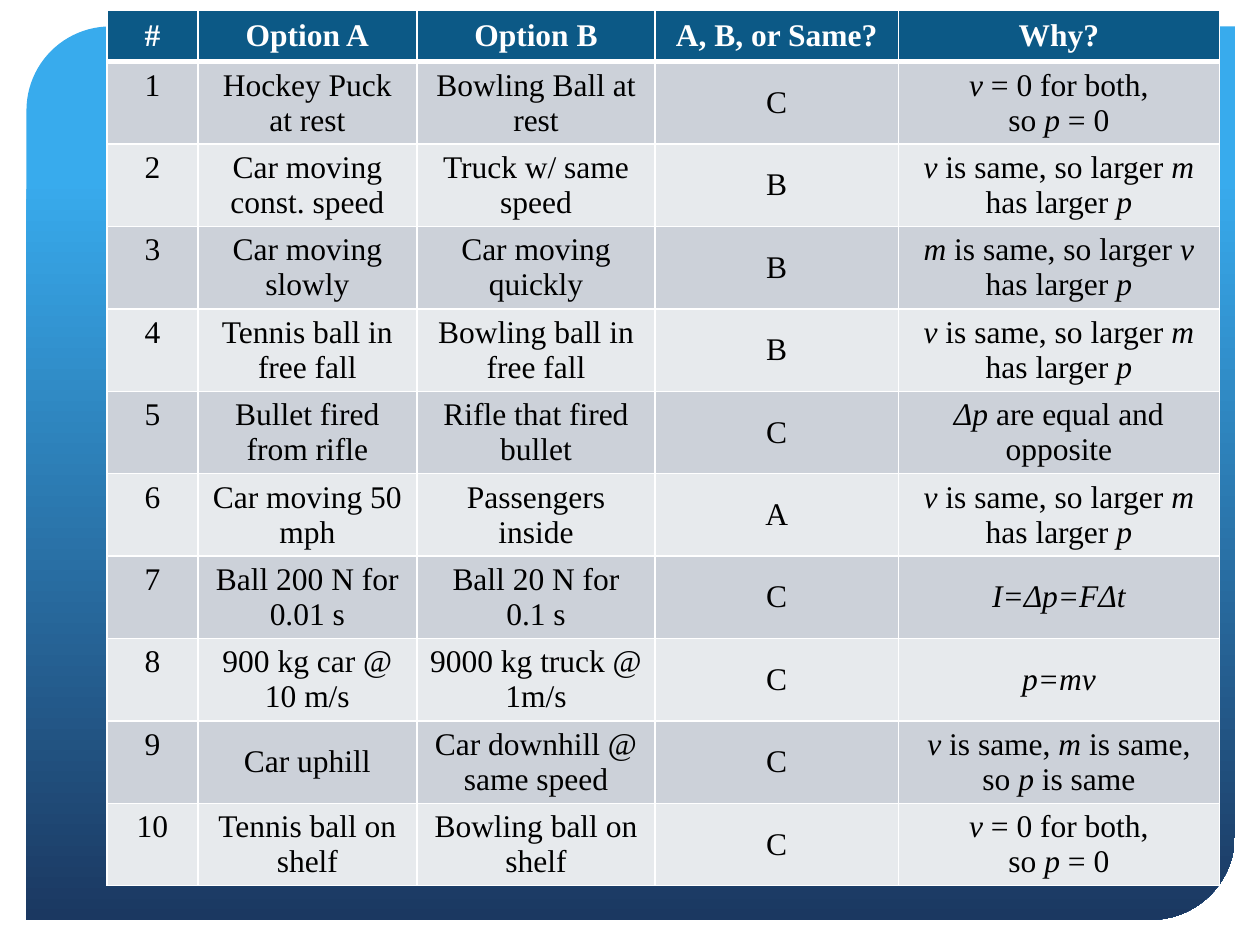
from lxml.etree import SubElement
from pptx import Presentation
from pptx.dml.color import RGBColor
from pptx.enum.shapes import MSO_SHAPE as Shape
from pptx.enum.text import MSO_ANCHOR as Anchor, PP_ALIGN as Align
from pptx.oxml.ns import qn
from pptx.util import Inches, Pt

COLORS = {
    "sky": "38ABED", "navy": "1B3861", "header": "0C5986",
    "odd": "CCD1D9", "even": "E7EAED", "white": "FFFFFF", "black": "000000",
}
FONT = "Times New Roman"

# Asterisks enclose italic text; a new line starts a new paragraph.
AT_REST = "*v *= 0 for both,\nso *p *= 0"
SAME_SPEED = "*v* is same, so larger *m* has larger *p*"
SAME_MASS = "*m* is same, so larger *v* has larger *p*"
HEADINGS = ("#", "Option A", "Option B", "A, B, or Same?", "Why?")
QUESTIONS = [
    ("Hockey Puck at rest", "Bowling Ball at rest", "C", AT_REST),
    ("Car moving const. speed", "Truck w/ same speed", "B", SAME_SPEED),
    ("Car moving slowly", "Car moving quickly", "B", SAME_MASS),
    ("Tennis ball in free fall", "Bowling ball in free fall", "B", SAME_SPEED),
    ("Bullet fired from rifle", "Rifle that fired bullet", "C",
     "*Δp *are equal and opposite"),
    ("Car moving 50 mph", "Passengers inside", "A", SAME_SPEED),
    ("Ball 200 N for 0.01 s", "Ball 20 N for\n0.1 s", "C", "*I=Δp=FΔt*"),
    ("900 kg car @ 10 m/s", "9000 kg truck @ 1m/s", "C", "*p=mv*"),
    ("Car uphill", "Car downhill @ same speed", "C",
     "*v* is same, *m* is same, so *p *is same"),
    ("Tennis ball on shelf", "Bowling ball on shelf", "C", AT_REST),
]
COLUMN_WIDTHS = (0.72, 1.74, 1.89, 1.93, 2.55)
HEADER_HEIGHT, ROW_HEIGHT = 0.41, 0.65


def rgb(name):
    return RGBColor.from_string(COLORS[name])


def add_background(page):
    panel = page.shapes.add_shape(Shape.ROUND_2_DIAG_RECTANGLE, Inches(0.21),
                                  Inches(0.21), Inches(9.59), Inches(7.09))
    panel.adjustments[0], panel.adjustments[1] = 0.094, 0
    panel.shadow.inherit = False
    panel.line.fill.background()
    panel.fill.gradient()
    panel.fill.gradient_angle = 270
    stops = panel.fill.gradient_stops
    for stop, position, color in zip(stops, (0.17, 1), ("sky", "navy")):
        stop.position = position
        stop.color.rgb = rgb(color)


def set_borders(cell, bottom):
    """Draw white cell borders, 1 pt wide except for the bottom one."""
    properties = cell._tc.get_or_add_tcPr()
    widths = {"a:lnL": 1, "a:lnR": 1, "a:lnT": 1, "a:lnB": bottom}
    for index, (tag, width) in enumerate(widths.items()):
        line = SubElement(properties, qn(tag), w=str(Pt(width)))
        properties.insert(index, line)
        fill = SubElement(line, qn("a:solidFill"))
        SubElement(fill, qn("a:srgbClr"), val=COLORS["white"])


def write_cell(cell, text, fill, color="black", bold=False,
               anchor=Anchor.MIDDLE, bottom=1):
    cell.fill.solid()
    cell.fill.fore_color.rgb = rgb(fill)
    set_borders(cell, bottom)
    cell.vertical_anchor = anchor
    frame = cell.text_frame
    for number, line in enumerate(text.split("\n")):
        para = frame.add_paragraph() if number else frame.paragraphs[0]
        para.alignment = Align.CENTER
        for index, part in enumerate(line.split("*")):
            if not part:
                continue
            span = para.add_run()
            span.text = part
            span.font.name, span.font.size = FONT, Pt(18)
            span.font.bold, span.font.italic = bold, index % 2 == 1
            span.font.color.rgb = rgb(color)


def add_answers(page):
    height = HEADER_HEIGHT + ROW_HEIGHT * len(QUESTIONS)
    table = page.shapes.add_table(
        len(QUESTIONS) + 1, len(HEADINGS), Inches(0.85), Inches(0.08),
        Inches(sum(COLUMN_WIDTHS)), Inches(height)).table
    for column, width in zip(table.columns, COLUMN_WIDTHS):
        column.width = Inches(width)
    for index, row in enumerate(table.rows):
        row.height = Inches(ROW_HEIGHT if index else HEADER_HEIGHT)
    for cell, heading in zip(table.rows[0].cells, HEADINGS):
        write_cell(cell, heading, "header", color="white", bold=True, bottom=3)
    for number, question in enumerate(QUESTIONS, start=1):
        fill = "odd" if number % 2 else "even"
        number_cell, *cells = table.rows[number].cells
        write_cell(number_cell, str(number), fill, anchor=Anchor.TOP)
        for cell, text in zip(cells, question):
            write_cell(cell, text, fill)


def main():
    deck = Presentation()
    deck.slide_width, deck.slide_height = Inches(10), Inches(7.5)
    page = deck.slides.add_slide(deck.slide_layouts[6])
    add_background(page)
    add_answers(page)
    deck.save("out.pptx")


if __name__ == "__main__":
    main()
